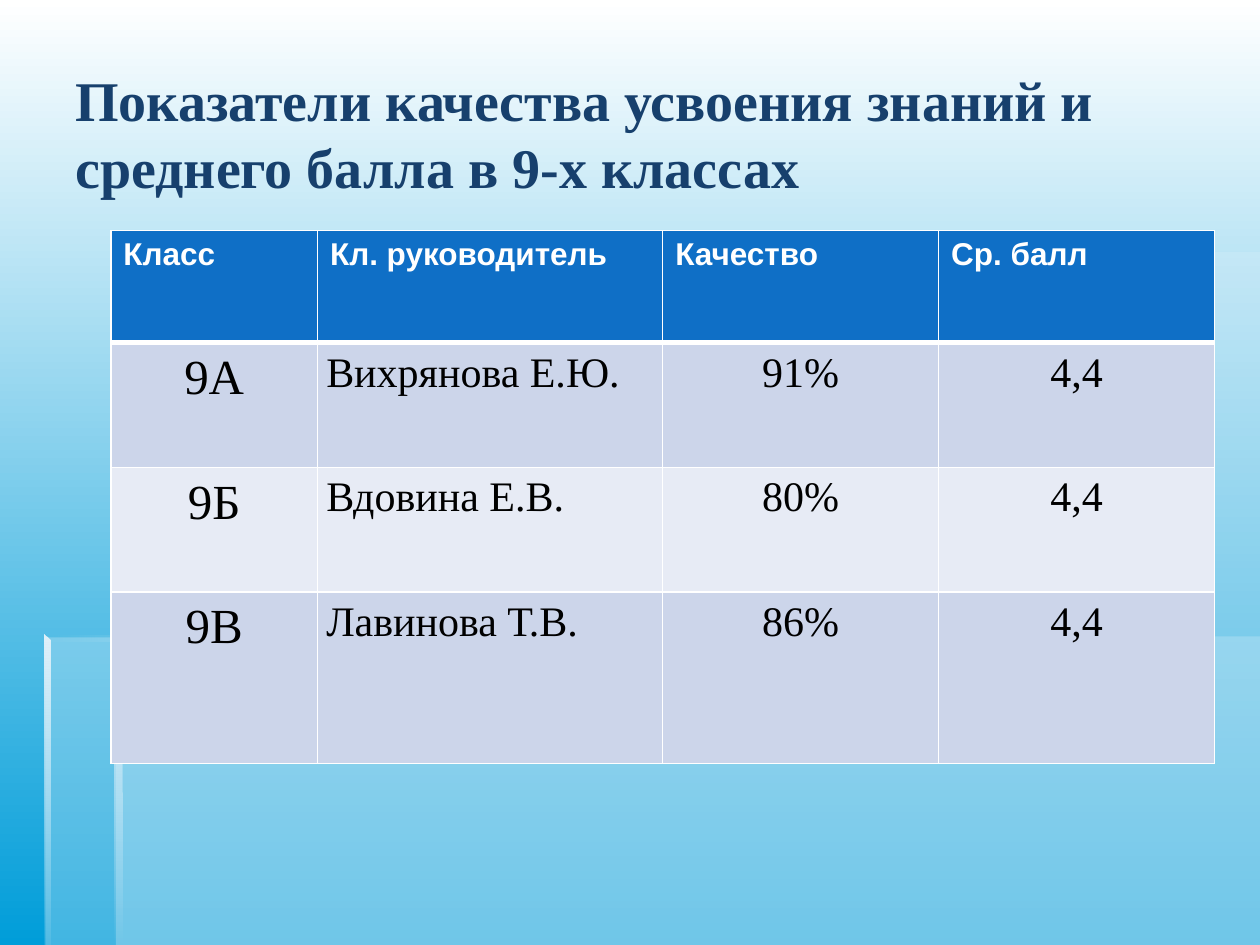
import pptx
import pptx.util
import pptx.dml.color
import pptx.enum.text
import pptx.oxml
import pptx.oxml.ns

Inches, Pt = pptx.util.Inches, pptx.util.Pt
RGBColor = pptx.dml.color.RGBColor
ALIGN = pptx.enum.text.PP_ALIGN

WHITE = RGBColor(0xFF, 0xFF, 0xFF)
BLACK = RGBColor(0, 0, 0)
SKY = RGBColor(0x00, 0x9D, 0xD9)
NAVY = RGBColor(0x17, 0x40, 0x6D)
BLUE = RGBColor(0x0F, 0x6F, 0xC6)
PALE = RGBColor(0xDB, 0xEF, 0xF9)
GLOW = RGBColor(0xE0, 0xF1, 0xFA)
GREY = RGBColor(0xC9, 0xDB, 0xE4)
BANDS = [RGBColor(0xCC, 0xD5, 0xEA), RGBColor(0xE7, 0xEB, 0xF5)]
SERIF = "Times New Roman"


def paint(fill, stops, angle):
    """Fill with a two-stop gradient; the angle runs counter-clockwise."""
    fill.gradient()
    fill.gradient_angle = angle
    for stop, (color, place) in zip(fill.gradient_stops, stops):
        stop.color.rgb = color
        stop.position = place


def write(para, text, size, font, color, bold=False):
    run = para.add_run()
    run.text = text
    run.font.size = Pt(size)
    run.font.name = font
    run.font.bold = bold
    run.font.color.rgb = color


deck = pptx.Presentation()
deck.slide_width, deck.slide_height = Inches(10), Inches(7.5)
slide = deck.slides.add_slide(deck.slide_layouts[6])
paint(slide.background.fill, [(WHITE, 0), (SKY, 1)], 270)

# Glass panels and their bevelled edges: points, colours, opacities, angle
PANES = [
    ([(0.92, 5.05), (0.92, 7.5), (10, 7.5), (10, 5.05)], [PALE], [30], 0),
    ([(0.94, 5.06), (0.36, 5.06), (0.36, 7.5), (10, 7.5), (10, 2), (0.94, 2)],
     [PALE], [30], 0),
    ([(0.92, 2), (0.92, 2.05), (8.91, 2.05), (8.91, 2)],
     [PALE, GREY], [0, 100], 0),
    ([(0.92, 2), (0.92, 5.1), (0.97, 5.1), (0.96, 2.04)],
     [GLOW, PALE], [100, 100], 270),
    ([(0.91, 7.5), (0.97, 7.5), (0.96, 5.08), (0.91, 5.04)],
     [GLOW, PALE], [100, 0], 270),
    ([(0.35, 5.04), (0.35, 5.09), (5.35, 5.09), (5.35, 5.04)],
     [PALE, GREY], [0, 100], 0),
    ([(0.35, 5.04), (0.35, 7.5), (0.4, 7.5), (0.4, 5.09)],
     [GLOW, PALE], [100, 10], 270),
]
for points, colors, alphas, angle in PANES:
    spots = [(Inches(x), Inches(y)) for x, y in points]
    draft = slide.shapes.build_freeform(*spots[0])
    draft.add_line_segments(spots[1:], close=True)
    pane = draft.convert_to_shape()
    pane.shadow.inherit = False
    pane.line.fill.background()
    if len(colors) == 1:
        pane.fill.solid()
        pane.fill.fore_color.rgb = colors[0]
    else:
        paint(pane.fill, list(zip(colors, (0, 1))), angle)
    tones = pane._element.spPr.iter(pptx.oxml.ns.qn("a:srgbClr"))
    for tone, alpha in zip(list(tones), alphas):
        tone.append(pptx.oxml.parse_xml(
            f'<a:alpha {pptx.oxml.ns.nsdecls("a")} val="{alpha * 1000}"/>'))

title = slide.shapes.add_textbox(
    Inches(0.5), Inches(0.27), Inches(9.17), Inches(1.57)).text_frame
title.word_wrap = True
title.vertical_anchor = pptx.enum.text.MSO_ANCHOR.MIDDLE
write(title.paragraphs[0],
      "Показатели качества усвоения знаний и среднего балла в 9-х классах",
      32, SERIF, NAVY, True)

ROWS = [
    ("Класс", "Кл. руководитель", "Качество", "Ср. балл"),
    ("9А", "Вихрянова Е.Ю.", "91%", "4,4"),
    ("9Б", "Вдовина Е.В.", "80%", "4,4"),
    ("9В", "Лавинова Т.В.", "86%", "4,4"),
]
WIDTHS = [1.64, 2.74, 2.19, 2.19]
HEIGHTS = [0.89, 0.99, 0.99, 1.36]
SIZES = [28, 24, 24, 24]
SIDES = [ALIGN.CENTER, ALIGN.JUSTIFY, ALIGN.CENTER, ALIGN.CENTER]

table = slide.shapes.add_table(
    len(ROWS), len(WIDTHS), Inches(0.88), Inches(1.83),
    Inches(sum(WIDTHS)), Inches(sum(HEIGHTS))).table
for col, width in zip(table.columns, WIDTHS):
    col.width = Inches(width)
for row, height in zip(table.rows, HEIGHTS):
    row.height = Inches(height)

for r, texts in enumerate(ROWS):
    for c, text in enumerate(texts):
        cell = table.cell(r, c)
        para = cell.text_frame.paragraphs[0]
        if r == 0:
            write(para, text, 18, "Arial", WHITE, True)
        else:
            cell.margin_left = cell.margin_right = Inches(0.07)
            cell.margin_top = cell.margin_bottom = 0
            para.alignment = SIDES[c]
            para.line_spacing = 1.15
            write(para, text, SIZES[c], SERIF, BLACK)
        for side in "LRTB":
            thick = (r, side) in [(0, "B"), (1, "T")]
            cell._tc.get_or_add_tcPr().append(pptx.oxml.parse_xml(
                f'<a:ln{side} {pptx.oxml.ns.nsdecls("a")} '
                f'w="{Pt(3 if thick else 1)}"><a:solidFill>'
                f'<a:srgbClr val="{WHITE}"/></a:solidFill></a:ln{side}>'))
        cell.fill.solid()
        cell.fill.fore_color.rgb = BANDS[(r - 1) % 2] if r else BLUE

deck.save("out.pptx")
